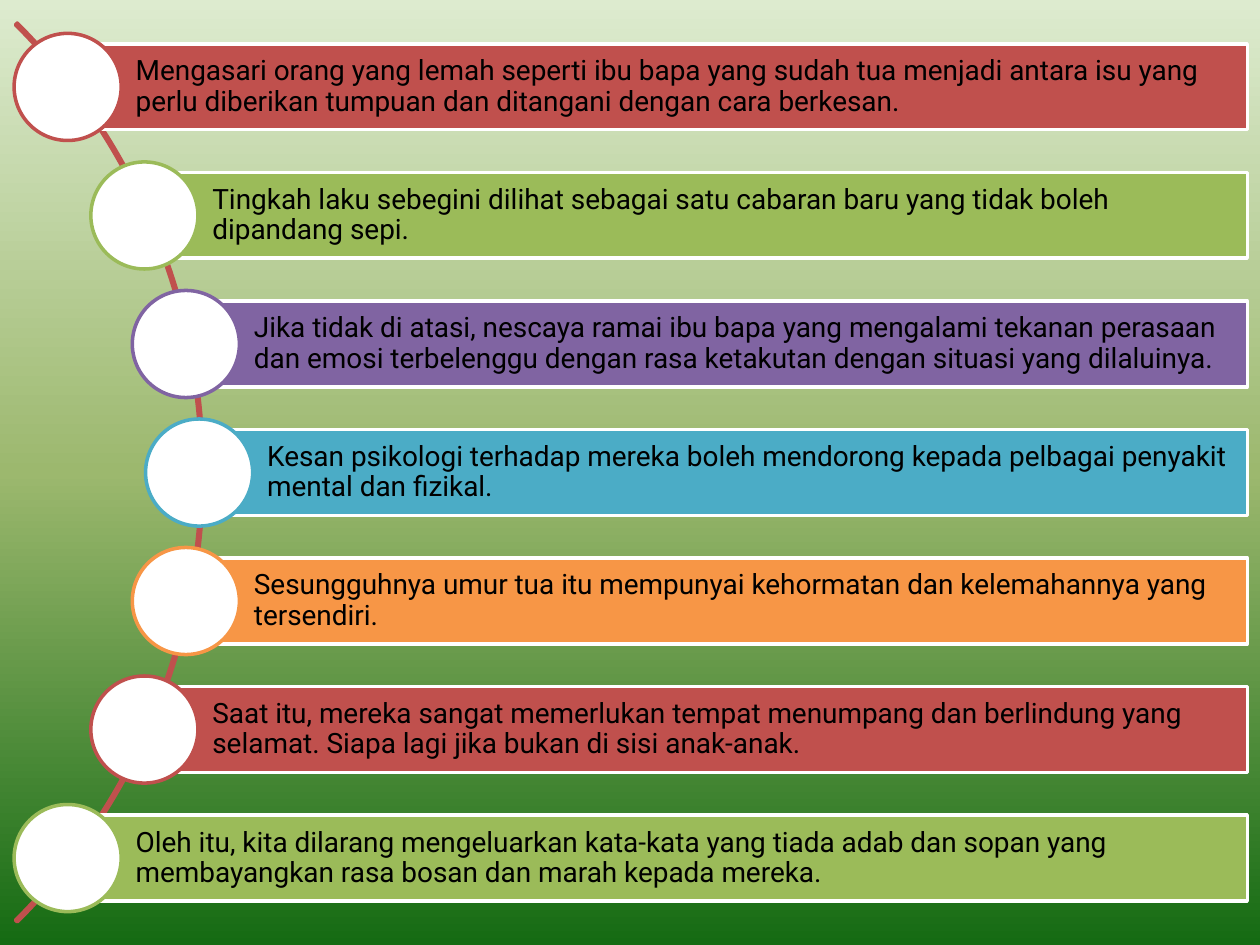
from copy import deepcopy
from math import sqrt

from pptx import Presentation
from pptx import util as u
from pptx.dml.color import RGBColor
from pptx.enum import shapes, text
from pptx.oxml.ns import qn

RED, GREEN, PURPLE, BLUE, ORANGE = "C0504D", "9BBB59", "8064A2", "4BACC6", "F79646"
BACKGROUND = [(0, "DDEBCF"), (0.5, "9CB86E"), (1, "156B13")]
POINTS = [
    (RED, "Mengasari orang yang lemah seperti ibu bapa yang sudah tua menjadi antara isu yang "
          "perlu diberikan tumpuan dan ditangani dengan cara berkesan."),
    (GREEN, "Tingkah laku sebegini dilihat sebagai satu cabaran baru yang tidak boleh "
            "dipandang sepi."),
    (PURPLE, "Jika tidak di atasi, nescaya ramai ibu bapa yang mengalami tekanan perasaan "
             "dan emosi terbelenggu dengan rasa ketakutan dengan situasi yang dilaluinya."),
    (BLUE, "Kesan psikologi terhadap mereka boleh mendorong kepada pelbagai penyakit "
           "mental dan fizikal."),
    (ORANGE, "Sesungguhnya umur tua itu mempunyai kehormatan dan kelemahannya yang "
             "tersendiri."),
    (RED, "Saat itu, mereka sangat memerlukan tempat menumpang dan berlindung yang "
          "selamat. Siapa lagi jika bukan di sisi anak-anak."),
    (GREEN, "Oleh itu, kita dilarang mengeluarkan kata-kata yang tiada adab dan sopan yang "
            "membayangkan rasa bosan dan marah kepada mereka."),
]
CENTER_X, CENTER_Y = -3.43, 3.75
RADIUS, ARC_SIZE = 5.01, 10.09
PITCH, BAR_HEIGHT, BAR_RIGHT, CIRCLE = 1.02, 0.68, 9.9, 0.85


def rgb(value):
    """Return the colour of a hex string."""
    return RGBColor.from_string(value)


def set_background(s):
    """Fill the slide with the vertical three-stop gradient."""
    fill = s.background.fill
    fill.gradient()
    fill.gradient_angle = 270
    stops = s._element.find(".//" + qn("a:gsLst"))
    stops.append(deepcopy(stops[-1]))
    for stop, (position, color) in zip(fill.gradient_stops, BACKGROUND):
        stop.position = position
        stop.color.rgb = rgb(color)


def add_shape(s, kind, x, y, w, h, line, fill=None):
    """Add a preset shape with a 2 pt outline."""
    sp = s.shapes.add_shape(kind, *map(u.Inches, (x, y, w, h)))
    sp.shadow.inherit = False
    if fill:
        sp.fill.solid()
        sp.fill.fore_color.rgb = rgb(fill)
    else:
        sp.fill.background()
    sp.line.color.rgb = rgb(line)
    sp.line.width = u.Pt(2)
    return sp


def add_arc(s):
    """Add the thin arc that the circles sit on."""
    sp = add_shape(s, shapes.MSO_SHAPE.BLOCK_ARC, CENTER_X - ARC_SIZE / 2,
                   CENTER_Y - ARC_SIZE / 2, ARC_SIZE, ARC_SIZE, RED)
    for i, value in enumerate((189, 27, 0.002)):
        sp.adjustments[i] = value


def add_bar(s, x, y, color, wording):
    """Add a coloured bar, centred on y, with its wording."""
    sp = add_shape(s, shapes.MSO_SHAPE.RECTANGLE, x, y - BAR_HEIGHT / 2,
                   BAR_RIGHT - x, BAR_HEIGHT, "FFFFFF", color)
    tf = sp.text_frame
    tf.word_wrap = True
    tf.vertical_anchor = text.MSO_ANCHOR.MIDDLE
    tf.margin_left = u.Inches(0.54)
    tf.margin_top = tf.margin_right = tf.margin_bottom = u.Inches(0.04)
    p = tf.paragraphs[0]
    p.alignment = text.PP_ALIGN.LEFT
    p.line_spacing = 0.9
    r = p.add_run()
    r.text = wording
    r.font.name = "Roboto"
    r.font.size = u.Pt(16)
    r.font.color.rgb = rgb("000000")


def add_circle(s, x, y, color):
    """Add a white circle centred on a point of the arc."""
    add_shape(s, shapes.MSO_SHAPE.OVAL, x - CIRCLE / 2, y - CIRCLE / 2,
              CIRCLE, CIRCLE, color, "FFFFFF")


def main():
    """Build the slide and save it."""
    prs = Presentation()
    prs.slide_width, prs.slide_height = u.Inches(10), u.Inches(7.5)
    s = prs.slides.add_slide(prs.slide_layouts[6])
    set_background(s)
    add_arc(s)
    for i, (color, wording) in enumerate(POINTS):
        dy = (i - len(POINTS) // 2) * PITCH
        x, y = CENTER_X + sqrt(RADIUS ** 2 - dy ** 2), CENTER_Y + dy
        add_bar(s, x, y, color, wording)
        add_circle(s, x, y, color)
    prs.save("out.pptx")


if __name__ == "__main__":
    main()
